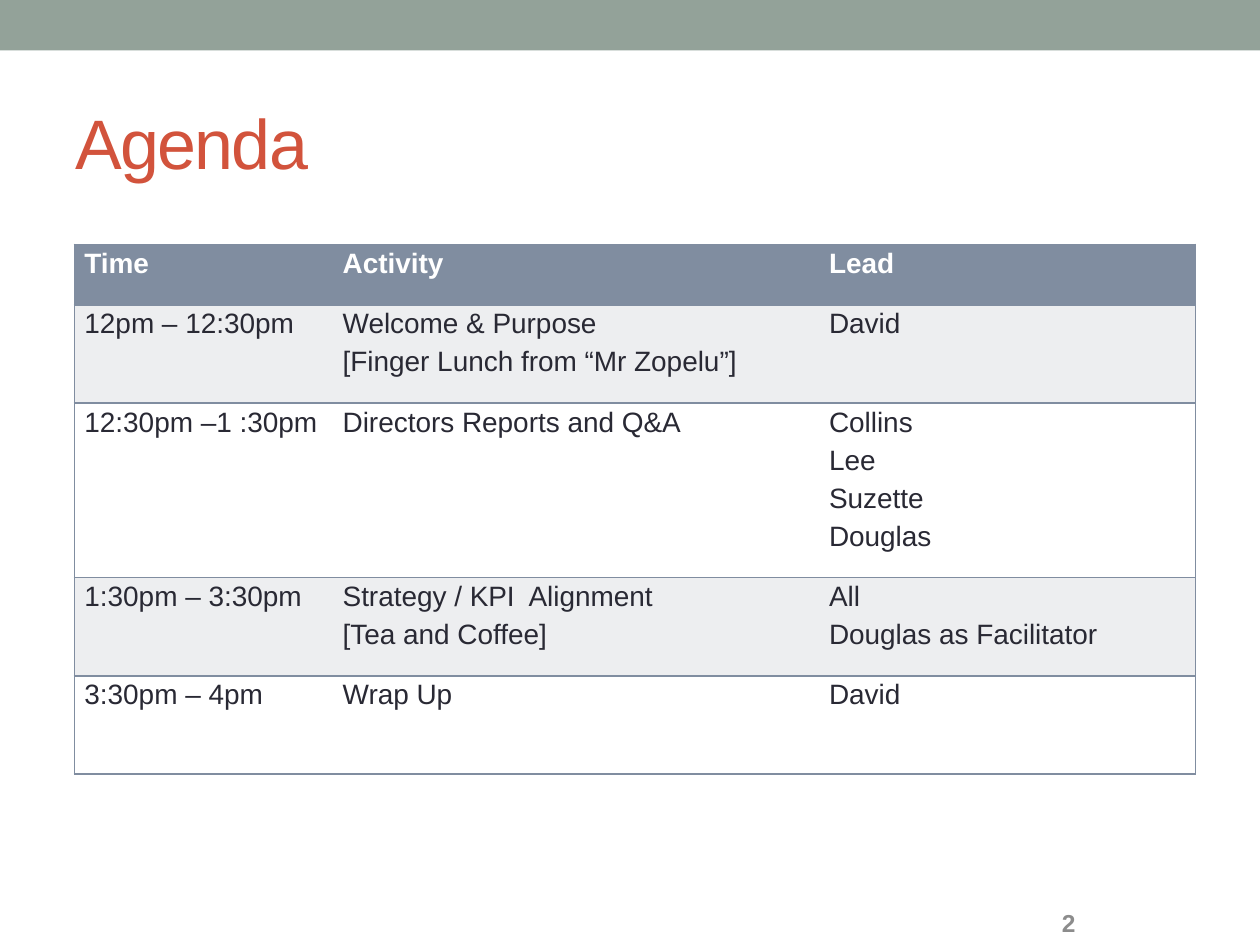
from dataclasses import dataclass

from lxml.etree import SubElement
from pptx import Presentation
from pptx.dml.color import RGBColor
from pptx.enum.shapes import MSO_SHAPE
from pptx.enum.text import MSO_ANCHOR, PP_ALIGN
from pptx.oxml.ns import qn
from pptx.util import Inches, Pt


@dataclass(frozen=True)
class Theme:
    """Colours, font and type sizes of the slide."""
    font: str = "Arial"
    band: str = "93A299"
    title: str = "D2533C"
    accent: str = "808DA0"
    stripe: str = "EDEEF0"
    white: str = "FFFFFF"
    ink: str = "292934"
    muted: str = "8C8C8C"
    title_size: int = 40
    table_size: int = 16
    number_size: int = 14


THEME = Theme()
COLUMN_WIDTHS = (2.05, 3.86, 2.99)
ROW_HEIGHTS = (0.48, 0.78, 1.38, 0.78, 0.78)
AGENDA = (
    ("Time", "Activity", "Lead"),
    ("12pm – 12:30pm", "Welcome & Purpose\n[Finger Lunch from “Mr Zopelu”]", "David"),
    ("12:30pm –1 :30pm", "Directors Reports and Q&A", "Collins\nLee\nSuzette\nDouglas"),
    ("1:30pm – 3:30pm", "Strategy / KPI  Alignment\n[Tea and Coffee]", "All\nDouglas as Facilitator"),
    ("3:30pm – 4pm", "Wrap Up", "David"),
)


def style_text(text_frame, size, color, bold=False, space_after=0):
    """Format every paragraph and run of a text frame."""
    for paragraph in text_frame.paragraphs:
        paragraph.alignment = PP_ALIGN.LEFT
        paragraph.space_after = Pt(space_after)
        for run in paragraph.runs:
            run.font.name = THEME.font
            run.font.size = Pt(size)
            run.font.bold = bold
            run.font.color.rgb = RGBColor.from_string(color)


def add_band(slide):
    """Draw the coloured band along the top edge."""
    band = slide.shapes.add_shape(MSO_SHAPE.RECTANGLE, 0, 0, Inches(10), Inches(0.4))
    band.shadow.inherit = False
    band.fill.solid()
    band.fill.fore_color.rgb = RGBColor.from_string(THEME.band)
    band.line.fill.background()


def set_title(slide, text):
    """Place and format the title placeholder."""
    title = slide.shapes.title
    title.left, title.top = Inches(0.5), Inches(0.58)
    title.width, title.height = Inches(9), Inches(1.08)
    title.text_frame.text = text
    title.text_frame.vertical_anchor = MSO_ANCHOR.MIDDLE
    style_text(title.text_frame, THEME.title_size, THEME.title)
    for run in title.text_frame.paragraphs[0].runs:
        run.font._element.set("spc", "-100")


def set_borders(cell, visible_sides):
    """Rule the given sides of a cell and clear the others."""
    properties = cell._tc.get_or_add_tcPr()
    for position, side in enumerate("LRTB"):
        line = SubElement(properties, qn(f"a:ln{side}"), w=str(Pt(1)))
        properties.insert(position, line)
        if side in visible_sides:
            fill = SubElement(line, qn("a:solidFill"))
            SubElement(fill, qn("a:srgbClr"), val=THEME.accent)
        else:
            SubElement(line, qn("a:noFill"))


def fill_cell(cell, text, fill, color, bold):
    """Write and format one table cell."""
    cell.margin_left = cell.margin_right = Inches(0.08)
    cell.margin_top, cell.margin_bottom = Inches(0.03), Inches(0.2)
    cell.vertical_anchor = MSO_ANCHOR.TOP
    cell.text_frame.text = text
    style_text(cell.text_frame, THEME.table_size, color, bold, space_after=4)
    cell.fill.solid()
    cell.fill.fore_color.rgb = RGBColor.from_string(fill)


def add_agenda(slide):
    """Build the striped agenda table."""
    agenda = slide.shapes.add_table(
        len(ROW_HEIGHTS), len(COLUMN_WIDTHS), Inches(0.59), Inches(1.94),
        Inches(sum(COLUMN_WIDTHS)), Inches(sum(ROW_HEIGHTS))).table
    for column, width in zip(agenda.columns, COLUMN_WIDTHS):
        column.width = Inches(width)
    for row, height in zip(agenda.rows, ROW_HEIGHTS):
        row.height = Inches(height)
    outer_sides = ("LTB", "TB", "RTB")
    for row_index, entries in enumerate(AGENDA):
        is_header = row_index == 0
        body_fill = THEME.stripe if row_index % 2 else THEME.white
        fill = THEME.accent if is_header else body_fill
        color = THEME.white if is_header else THEME.ink
        for column_index, text in enumerate(entries):
            cell = agenda.cell(row_index, column_index)
            fill_cell(cell, text, fill, color, is_header)
            set_borders(cell, outer_sides[column_index])


def add_page_number(slide, number):
    """Write the page number at the bottom right."""
    page_number = slide.shapes.add_textbox(
        Inches(8.33), Inches(7.14), Inches(1.17), Inches(0.36))
    page_number.text_frame.word_wrap = True
    page_number.text_frame.vertical_anchor = MSO_ANCHOR.MIDDLE
    page_number.text_frame.text = number
    style_text(page_number.text_frame, THEME.number_size, THEME.muted, bold=True)


def main():
    """Build and save the agenda slide."""
    presentation = Presentation()
    presentation.slide_width, presentation.slide_height = Inches(10), Inches(7.5)
    slide = presentation.slides.add_slide(presentation.slide_layouts[5])
    add_band(slide)
    set_title(slide, "Agenda")
    add_agenda(slide)
    add_page_number(slide, "2")
    presentation.save("out.pptx")


if __name__ == "__main__":
    main()
